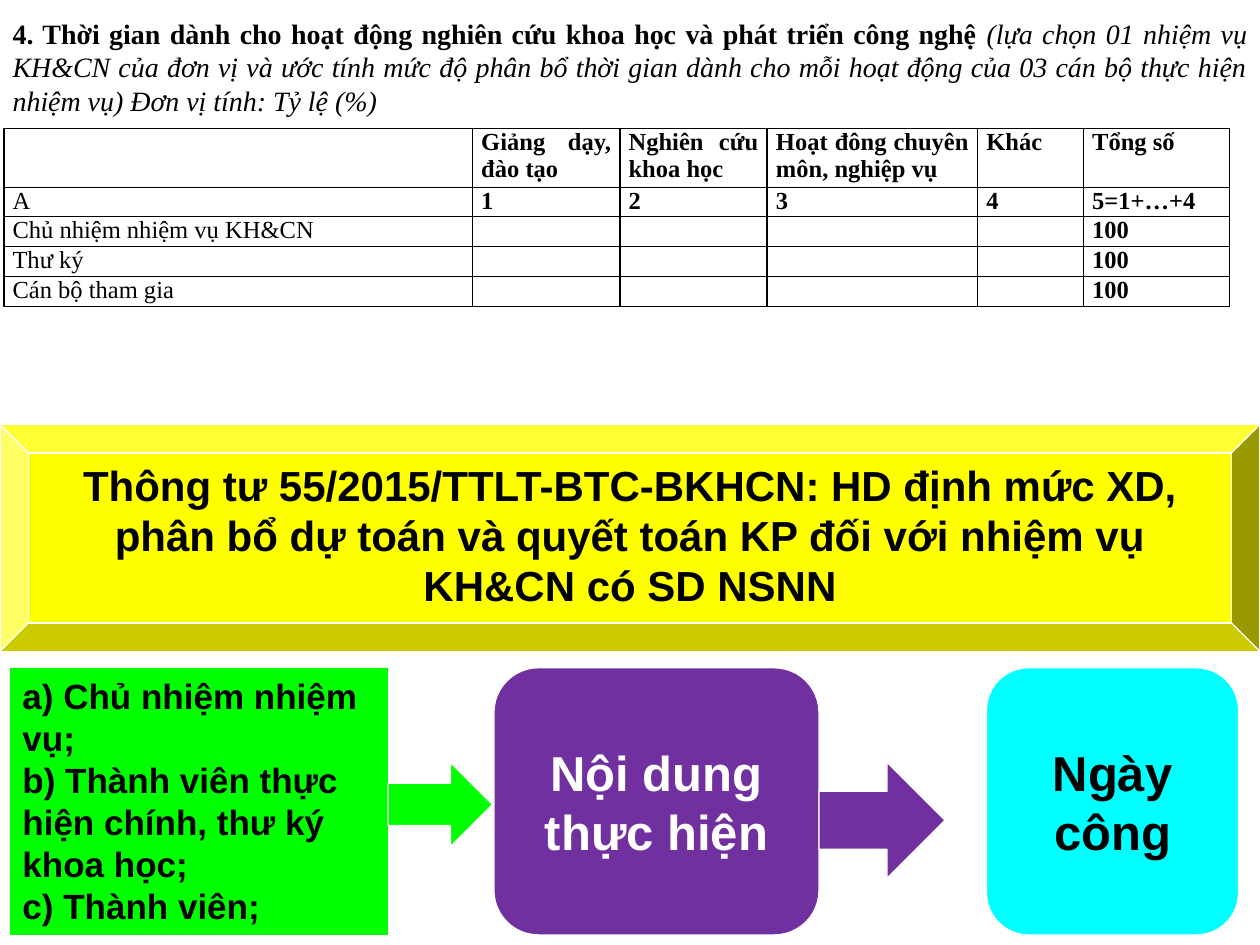
from pptx import Presentation
from pptx.dml.color import RGBColor
from pptx.enum.shapes import MSO_SHAPE as SHAPE
from pptx.enum.text import MSO_ANCHOR as ANCHOR, MSO_AUTO_SIZE as AUTO, PP_ALIGN as ALIGN
from pptx.oxml import parse_xml
from pptx.oxml.ns import nsdecls
from pptx.util import Inches, Pt

COLORS = {"black": "000000", "white": "FFFFFF", "yellow": "FFFF00",
          "green": "00FF00", "purple": "7030A0", "cyan": "00FFFF"}
SERIF, SANS = "Times New Roman", "Arial"
COL_WIDTHS = [3.72, 1.17, 1.17, 1.67, 0.84, 1.16]
ROWS = [
    ["", "Giảng dạy, đào tạo", "Nghiên cứu khoa học", "Hoạt đông chuyên môn, nghiệp vụ",
     "Khác", "Tổng số"],
    ["A", "1", "2", "3", "4", "5=1+…+4"],
    ["Chủ nhiệm nhiệm vụ KH&CN", "", "", "", "", "100"],
    ["Thư ký", "", "", "", "", "100"],
    ["Cán bộ tham gia", "", "", "", "", "100"],
]


def rgb(name):
    """Return the named colour."""
    return RGBColor.from_string(COLORS[name])


def add_run(p, text, font, size, color="black", bold=True, italic=False):
    """Add one formatted run to a paragraph."""
    r = p.add_run()
    r.text = text
    r.font.name, r.font.size = font, Pt(size)
    r.font.bold, r.font.italic = bold, italic
    r.font.color.rgb = rgb(color)


def add_block(slide, kind, box, fill, lines=(), size=20, color="black",
              align=ALIGN.CENTER, anchor=ANCHOR.MIDDLE, outlined=True):
    """Add a filled shape holding one paragraph per line."""
    s = slide.shapes.add_shape(kind, *map(Inches, box))
    s.shadow.inherit = False
    s.fill.solid()
    s.fill.fore_color.rgb = rgb(fill)
    if outlined:
        s.line.color.rgb = rgb("white")
        s.line.width = Pt(0.75)
    else:
        s.line.fill.background()
    tf = s.text_frame
    tf.word_wrap = True
    tf.vertical_anchor = anchor
    for i, line in enumerate(lines):
        p = tf.add_paragraph() if i else tf.paragraphs[0]
        p.alignment = align
        add_run(p, line, SANS, size, color)


def add_heading(slide, box):
    """Place the question in the title placeholder."""
    s = slide.shapes.title
    s.left, s.top, s.width, s.height = map(Inches, box)
    tf = s.text_frame
    tf.word_wrap = True
    tf.auto_size = AUTO.NONE
    tf.vertical_anchor = ANCHOR.TOP
    p = tf.paragraphs[0]
    p.alignment = ALIGN.JUSTIFY
    p.space_before = Pt(6)
    add_run(p, "4. Thời gian dành cho hoạt động nghiên cứu khoa học và phát triển công nghệ ",
            SERIF, 16)
    add_run(p, "(lựa chọn 01 nhiệm vụ KH&CN của đơn vị và ước tính mức độ phân bổ thời gian "
               "dành cho mỗi hoạt động của 03 cán bộ thực hiện nhiệm vụ) "
               "Đơn vị tính: Tỷ lệ (%)", SERIF, 16, bold=False, italic=True)


def format_cell(cell, text, bold):
    """Fill one cell with text, margins and black borders."""
    cell.margin_left = cell.margin_right = Inches(0.07)
    cell.margin_top = cell.margin_bottom = 0
    tcPr = cell._tc.get_or_add_tcPr()
    for side in "LRTB":
        tcPr.append(parse_xml(
            f'<a:ln{side} {nsdecls("a")} w="{Pt(1)}"><a:solidFill>'
            f'<a:srgbClr val="{COLORS["black"]}"/></a:solidFill></a:ln{side}>'))
    cell.fill.background()
    p = cell.text_frame.paragraphs[0]
    p.alignment = ALIGN.JUSTIFY
    p.space_before = p.space_after = Pt(2)
    if text:
        add_run(p, text, SERIF, 14, bold=bold)
    else:
        p._p.get_or_add_endParaRPr().set("sz", "1400")


def add_time_table(slide, box):
    """Add the table of working time shares."""
    frame = slide.shapes.add_table(len(ROWS), len(COL_WIDTHS), *map(Inches, box))
    table = frame.table
    table.first_row = table.horz_banding = False
    for col, width in zip(table.columns, COL_WIDTHS):
        col.width = Inches(width)
    for r, row in enumerate(ROWS):
        table.rows[r].height = Inches(0.23 if r else 0.47)
        for c, text in enumerate(row):
            format_cell(table.cell(r, c), text, bold=c > 0)


def add_flow(slide, box):
    """Add the flow from people through tasks to working days."""
    left, top, width, height = box
    add_block(slide, SHAPE.RECTANGLE, (left, top, 3, height), "green",
              ["a) Chủ nhiệm nhiệm vụ;", "b) Thành viên thực hiện chính, thư ký khoa học;",
               "c) Thành viên;"], align=ALIGN.LEFT, anchor=ANCHOR.TOP, outlined=False)
    add_block(slide, SHAPE.ROUNDED_RECTANGLE, (left + 3.84, top, 2.58, height), "purple",
              ["Nội dung thực hiện"], 28, "white")
    add_block(slide, SHAPE.ROUNDED_RECTANGLE, (left + width - 2, top, 2, height), "cyan",
              ["Ngày công"], 28)
    add_block(slide, SHAPE.RIGHT_ARROW, (left + 3, top + 0.75, 0.83, 0.67), "green")
    add_block(slide, SHAPE.RIGHT_ARROW, (left + 6.42, top + 0.75, 1, 0.92), "purple")


def main():
    """Build and save the slide."""
    prs = Presentation()
    prs.slide_width, prs.slide_height = Inches(10), Inches(7.5)
    slide = prs.slides.add_slide(prs.slide_layouts[5])
    add_heading(slide, (0, 0.08, 10, 0.91))
    add_time_table(slide, (0.03, 1.02, 9.73, 1.39))
    add_block(slide, SHAPE.BEVEL, (0, 3.37, 10, 1.8), "yellow",
              ["Thông tư 55/2015/TTLT-BTC-BKHCN: HD định mức XD, phân bổ dự toán và "
               "quyết toán KP đối với nhiệm vụ KH&CN có SD NSNN"], 24, anchor=ANCHOR.TOP)
    add_flow(slide, (0.08, 5.3, 9.75, 2.12))
    prs.save("out.pptx")


if __name__ == "__main__":
    main()
